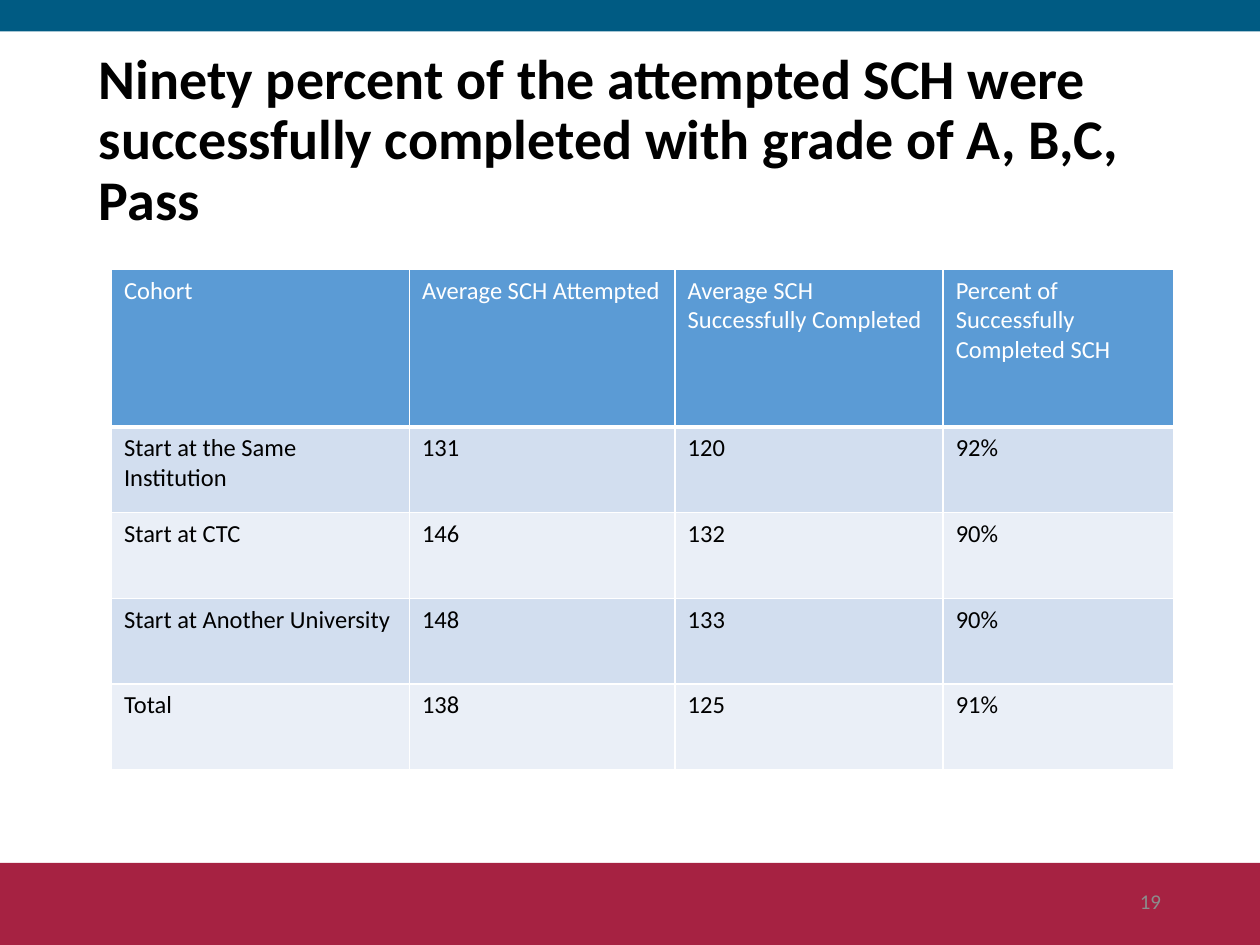
from lxml import etree
from pptx import Presentation
from pptx.dml.color import RGBColor
from pptx.enum.shapes import MSO_SHAPE
from pptx.enum.text import MSO_ANCHOR, PP_ALIGN
from pptx.oxml.ns import qn
from pptx.util import Pt

RECTANGLE = MSO_SHAPE.RECTANGLE
MIDDLE = MSO_ANCHOR.MIDDLE
LEFT, RIGHT = PP_ALIGN.LEFT, PP_ALIGN.RIGHT

FONT = "Calibri"
BLACK = RGBColor(0x00, 0x00, 0x00)
WHITE = RGBColor(0xFF, 0xFF, 0xFF)
GRAY = RGBColor(0x8C, 0x8C, 0x8C)
CRIMSON = RGBColor(0xA6, 0x22, 0x42)
TEAL = RGBColor(0x00, 0x5B, 0x83)
HEADER_BLUE = RGBColor(0x5B, 0x9B, 0xD5)
ROW_BANDS = (RGBColor(0xD2, 0xDE, 0xEF), RGBColor(0xEA, 0xEF, 0xF7))

PAGE_WIDTH, PAGE_HEIGHT = 720, 540
COLUMN_WIDTHS = (170.3, 151.8, 153.2, 131.8)
HEADER_HEIGHT, ROW_HEIGHT = 90, 49
TITLE = ("Ninety percent of the attempted SCH were successfully completed "
         "with grade of A, B,C, Pass")
ROWS = (
    ("Cohort", "Average SCH Attempted", "Average SCH Successfully Completed",
     "Percent of Successfully Completed SCH"),
    ("Start at the Same Institution", "131", "120", "92%"),
    ("Start at CTC", "146", "132", "90%"),
    ("Start at Another University", "148", "133", "90%"),
    ("Total", "138", "125", "91%"),
)


def write_text(frame, text, size=14, color=BLACK, bold=False, align=LEFT,
               line_spacing=None):
    para = frame.paragraphs[0]
    para.alignment = align
    para.line_spacing = line_spacing
    span = para.add_run()
    span.text = text
    span.font.name = FONT
    span.font.size = Pt(size)
    span.font.bold = bold
    span.font.color.rgb = color


def add_band(page, left, top, width, height, color):
    band = page.shapes.add_shape(RECTANGLE, Pt(left), Pt(top), Pt(width), Pt(height))
    band.shadow.inherit = False
    band.fill.solid()
    band.fill.fore_color.rgb = color
    band.line.fill.background()


def add_text(page, left, top, width, height, text, **text_format):
    box = page.shapes.add_textbox(Pt(left), Pt(top), Pt(width), Pt(height))
    box.text_frame.word_wrap = True
    box.text_frame.vertical_anchor = MIDDLE
    write_text(box.text_frame, text, **text_format)


def add_borders(cell, bottom_width):
    """Draw white cell edges; call before the fill, which must follow them."""
    properties = cell._tc.get_or_add_tcPr()
    for edge, width in (("lnL", 1), ("lnR", 1), ("lnT", 1), ("lnB", bottom_width)):
        line = etree.SubElement(properties, qn(f"a:{edge}"), w=str(Pt(width)))
        fill = etree.SubElement(line, qn("a:solidFill"))
        etree.SubElement(fill, qn("a:srgbClr"), val=str(WHITE))


def add_cohort_table(page, left, top):
    heights = [HEADER_HEIGHT] + [ROW_HEIGHT] * (len(ROWS) - 1)
    table = page.shapes.add_table(
        len(ROWS), len(COLUMN_WIDTHS), Pt(left), Pt(top),
        Pt(sum(COLUMN_WIDTHS)), Pt(sum(heights))).table
    for column, width in zip(table.columns, COLUMN_WIDTHS):
        column.width = Pt(width)
    for index, (row, height, texts) in enumerate(zip(table.rows, heights, ROWS)):
        row.height = Pt(height)
        is_header = index == 0
        for cell, text in zip(row.cells, texts):
            add_borders(cell, bottom_width=3 if is_header else 1)
            cell.fill.solid()
            cell.fill.fore_color.rgb = (
                HEADER_BLUE if is_header else ROW_BANDS[(index - 1) % 2])
            write_text(cell.text_frame, text, color=WHITE if is_header else BLACK)


def main():
    deck = Presentation()
    deck.slide_width, deck.slide_height = Pt(PAGE_WIDTH), Pt(PAGE_HEIGHT)
    page = deck.slides.add_slide(deck.slide_layouts[6])
    add_band(page, 0, 493, PAGE_WIDTH, 48, CRIMSON)
    add_band(page, 0, 0, PAGE_WIDTH, 18, TEAL)
    add_text(page, 49.5, 28.75, 621, 104.4, TITLE, size=32, bold=True,
             line_spacing=0.9)
    add_cohort_table(page, 63.7, 154)
    add_text(page, 508.5, 500.5, 162, 28.75, "19", size=12, color=GRAY, align=RIGHT)
    deck.save("out.pptx")


if __name__ == "__main__":
    main()
